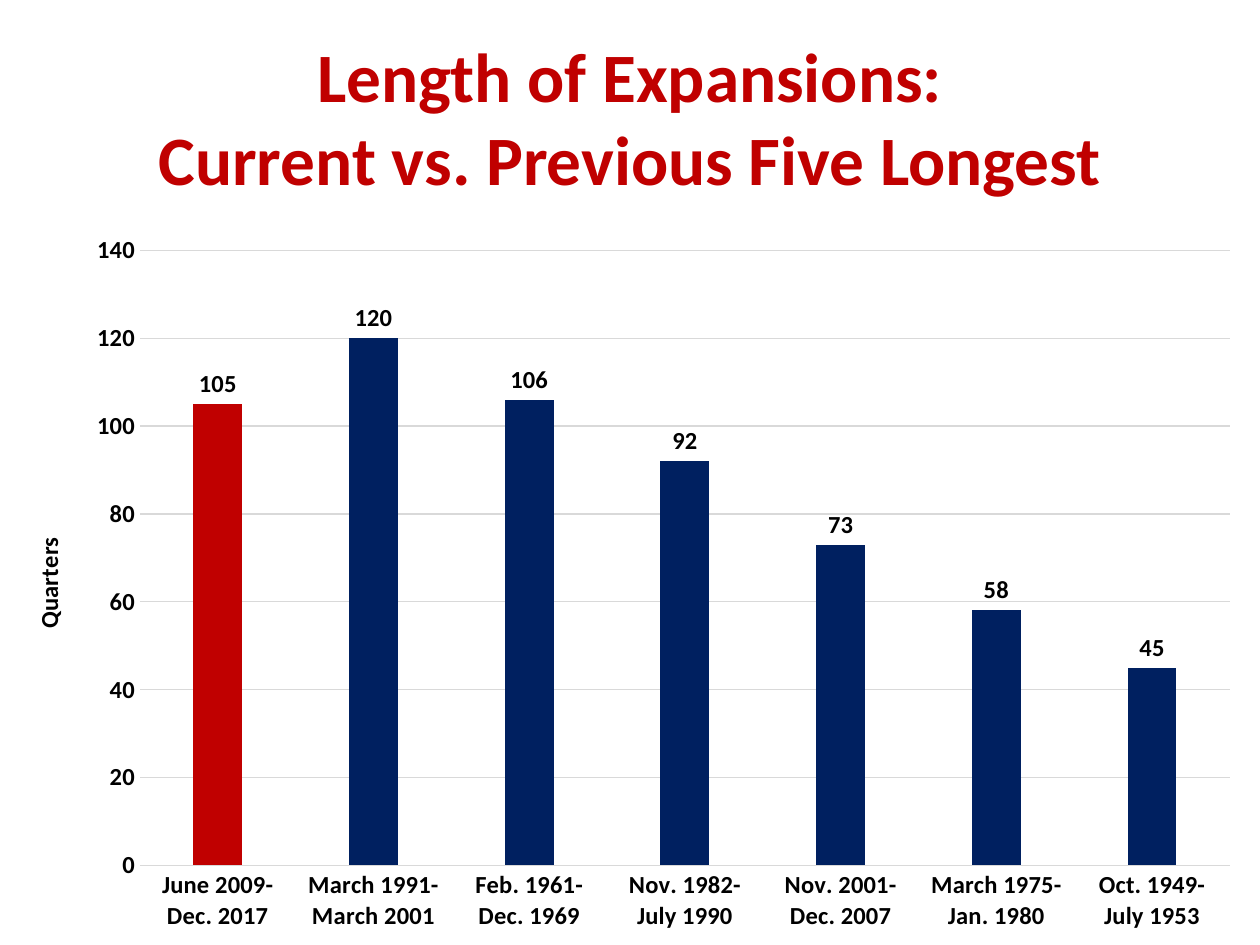
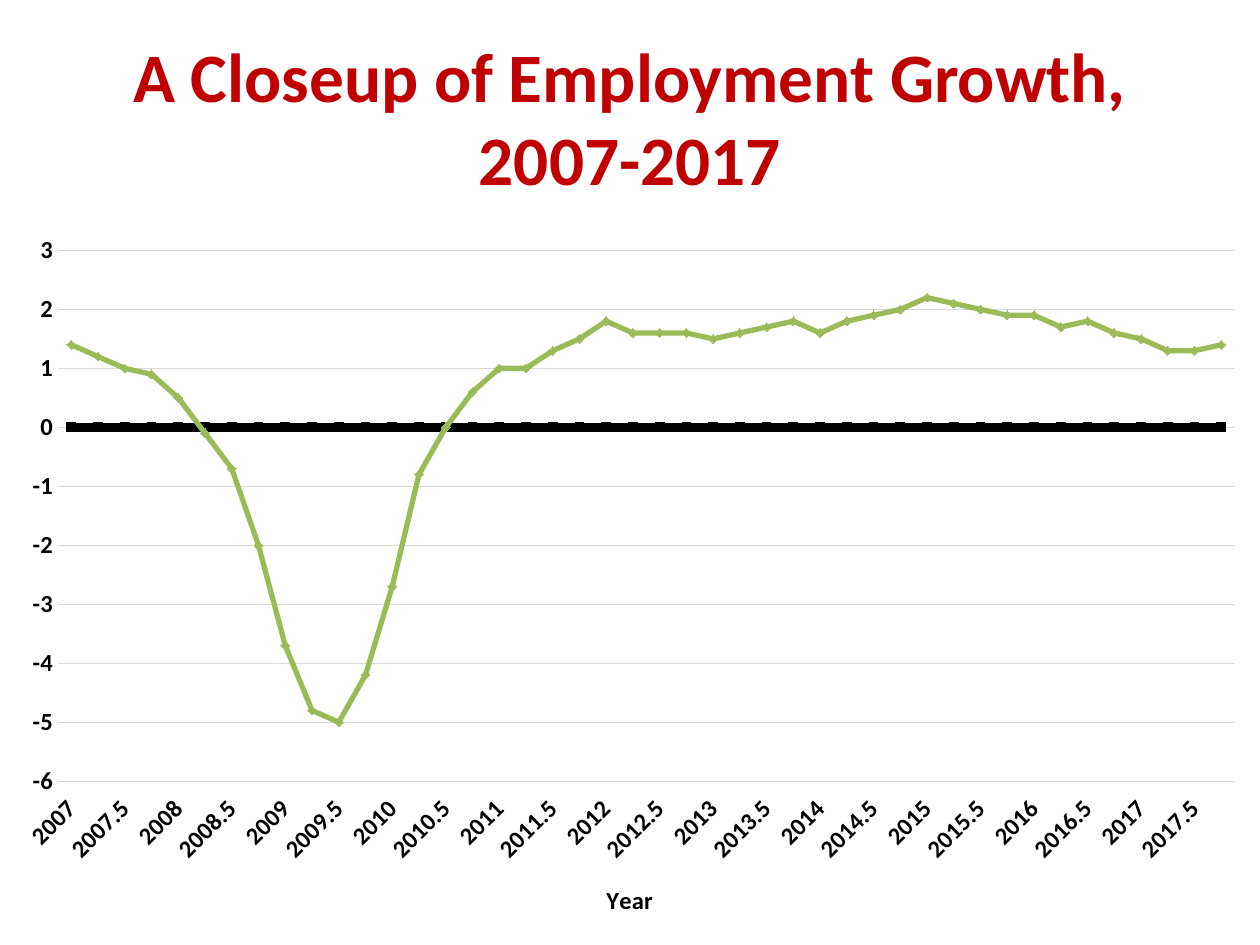
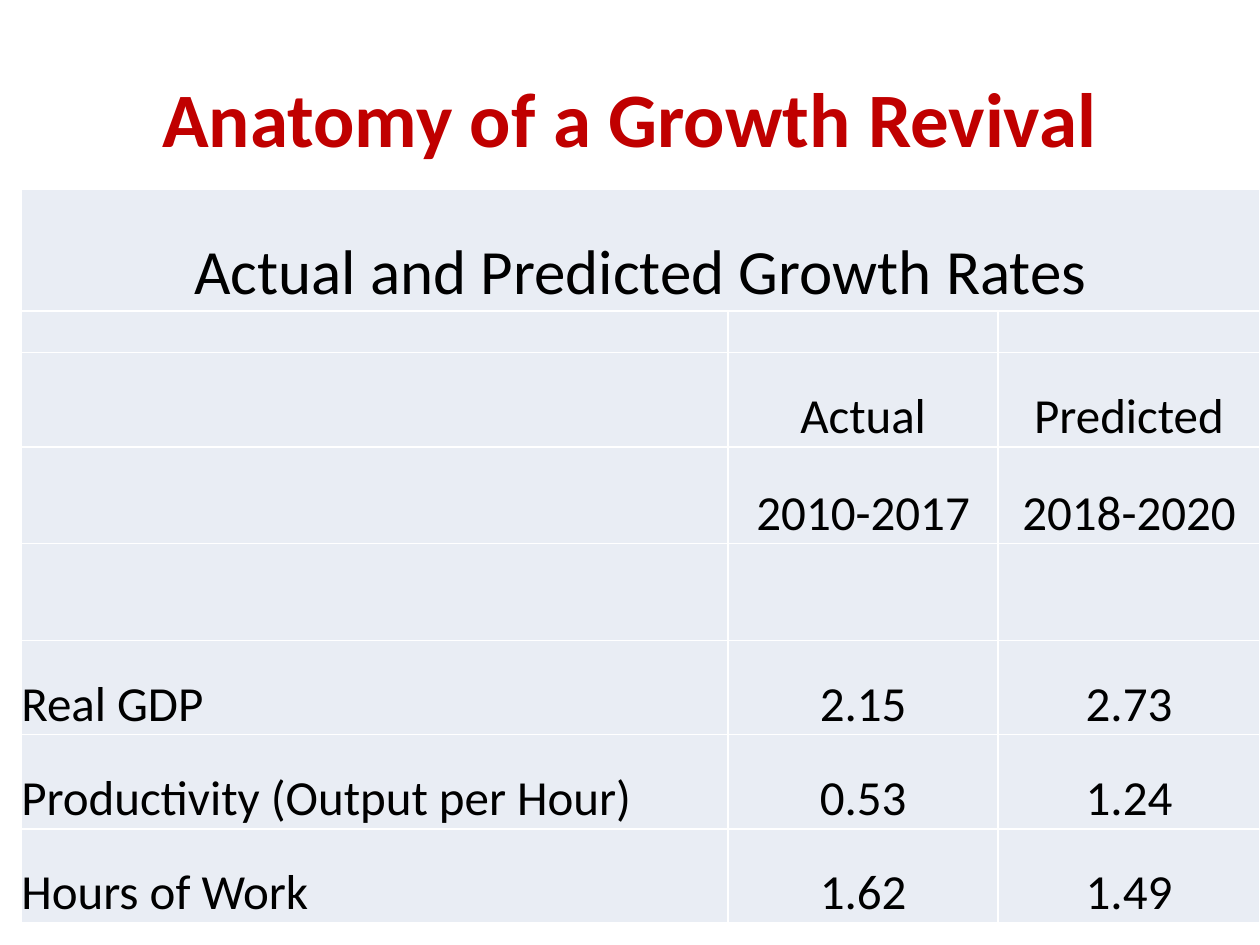
from lxml.etree import SubElement
from pptx import Presentation
from pptx.chart.data import CategoryChartData
from pptx.dml.color import RGBColor
from pptx.enum.chart import XL_CHART_TYPE, XL_LABEL_POSITION, XL_TICK_LABEL_POSITION, XL_TICK_MARK
from pptx.enum.text import MSO_ANCHOR, MSO_AUTO_SIZE, PP_ALIGN
from pptx.oxml import parse_xml
from pptx.oxml.ns import nsdecls, qn
from pptx.util import Cm, Pt

HUES = {"red": "C00000", "navy": "002060", "green": "9BBB59", "black": "000000",
        "grid": "D9D9D9", "pale": "E9EDF4", "white": "FFFFFF"}
FONT = "Calibri"


def hue(name):
    return RGBColor.from_string(HUES[name])


class Deck:
    def __init__(self):
        self.prs = Presentation()
        self.prs.slide_width, self.prs.slide_height = Cm(25.4), Cm(19.05)
        self.slide = None

    def style(self, font, size, color="black", bold=False):
        font.name, font.size, font.bold = FONT, Pt(size), bold
        font.color.rgb = hue(color)

    def start(self, text, size=39.6):
        """Add a slide with its title."""
        self.slide = self.prs.slides.add_slide(self.prs.slide_layouts[5])
        title = self.slide.shapes.title
        title.left, title.top, title.width, title.height = Cm(1.27), Cm(0.76), Cm(22.86), Cm(3.18)
        frame = title.text_frame
        frame.text = text
        frame.auto_size = MSO_AUTO_SIZE.NONE
        frame.vertical_anchor = MSO_ANCHOR.MIDDLE
        frame.paragraphs[0].alignment = PP_ALIGN.CENTER
        for run in frame.paragraphs[0].runs:
            self.style(run.font, size, "red", True)

    def chart(self, kind, left, width, cats, rows, plot, scale):
        """Add a chart; plot is the inner area as shares of the frame."""
        data = CategoryChartData()
        data.categories = cats
        for num, row in enumerate(rows, 1):
            data.add_series(f"Series {num}", row)
        chart = self.slide.shapes.add_chart(
            kind, Cm(left), Cm(4.45), Cm(width), Cm(14.6), data).chart
        self.style(chart.font, 10)
        chart.has_legend = chart.has_title = False
        self.place(chart, plot)
        for axis in (chart.category_axis, chart.value_axis):
            axis.major_tick_mark = axis.minor_tick_mark = XL_TICK_MARK.NONE
            self.style(axis.tick_labels.font, 14, bold=True)
        line = chart.category_axis.format.line
        line.color.rgb, line.width = hue("grid"), Pt(0.75)
        axis = chart.value_axis
        axis.format.line.fill.background()
        axis.minimum_scale, axis.maximum_scale, axis.major_unit = scale
        axis.has_major_gridlines = True
        grid = axis.major_gridlines.format.line
        grid.color.rgb, grid.width = hue("grid"), Pt(0.75)
        return chart

    def place(self, chart, plot):
        area = chart.element.xpath("c:chart/c:plotArea")[0]
        for old in area.findall(qn("c:layout")):
            area.remove(old)
        sizes = "".join(f'<c:{key} val="{val}"/>' for key, val in zip("xywh", plot))
        area.insert(0, parse_xml(
            f'<c:layout {nsdecls("c")}><c:manualLayout><c:layoutTarget val="inner"/>'
            f'<c:xMode val="edge"/><c:yMode val="edge"/>{sizes}</c:manualLayout></c:layout>'))

    def name_axis(self, axis, text):
        frame = axis.axis_title.text_frame
        frame.text = text
        self.style(frame.paragraphs[0].runs[0].font, 14, bold=True)

    def slant(self, axis, skip):
        """Tilt the tick labels and show one in every skip."""
        axis.tick_label_position = XL_TICK_LABEL_POSITION.LOW
        root = axis.tick_labels.font and axis._element
        root.xpath("c:txPr/a:bodyPr")[0].set("rot", "-2700000")
        root.find(qn("c:noMultiLvlLbl")).addprevious(
            parse_xml(f'<c:tickLblSkip {nsdecls("c")} val="{skip}"/>'))

    def trace(self, series, color, width):
        series.smooth = False
        series.marker.style = None
        line = series.format.line
        line.color.rgb, line.width = hue(color), Pt(width)
        series._element.xpath("c:spPr/a:ln")[0].set("cap", "rnd")

    def table(self, left, top, cols, heights, rows):
        table = self.slide.shapes.add_table(
            len(rows), len(cols), Cm(left), Cm(top), Cm(sum(cols)), Cm(sum(heights))).table
        table.first_row = table.horz_banding = False
        for col, width in zip(table.columns, cols):
            col.width = Cm(width)
        for row, height in zip(table.rows, heights):
            row.height = Cm(height)
        for r, row in enumerate(rows):
            for c, text in enumerate(row):
                self.cell(table.cell(r, c), text, 28 if r else 36, r and not c)
        table.cell(0, 0).merge(table.cell(0, len(cols) - 1))

    def cell(self, cell, text, size, flush):
        cell.margin_left = cell.margin_right = cell.margin_top = cell.margin_bottom = 0
        cell.vertical_anchor = MSO_ANCHOR.BOTTOM
        props = cell._tc.get_or_add_tcPr()
        for side in "LRTB":
            edge = SubElement(props, qn(f"a:ln{side}"), w=str(Pt(1)))
            fill = SubElement(edge, qn("a:solidFill"))
            SubElement(fill, qn("a:srgbClr"), val=HUES["white"])
        cell.fill.solid()
        cell.fill.fore_color.rgb = hue("pale")
        if text:
            cell.text = text
            para = cell.text_frame.paragraphs[0]
            para.alignment = PP_ALIGN.LEFT if flush else PP_ALIGN.CENTER
            self.style(para.runs[0].font, size)


def lengths(deck):
    deck.start("Length of Expansions:\vCurrent vs. Previous Five Longest")
    spans = ["June 2009- Dec. 2017", "March 1991- March 2001", "Feb. 1961- Dec. 1969",
             "Nov. 1982- July 1990", "Nov. 2001- Dec. 2007", "March 1975- Jan. 1980",
             "Oct. 1949- July 1953"]
    chart = deck.chart(XL_CHART_TYPE.COLUMN_CLUSTERED, 0.1, 25.2, spans,
                       [[105, 120, 106, 92, 73, 58, 45]],
                       (0.108, 0.041, 0.872, 0.849), (0, 140, 20))
    deck.name_axis(chart.value_axis, "Quarters")
    bars = chart.plots[0]
    bars.gap_width, bars.overlap, bars.vary_by_categories = 219, -27, False
    series = bars.series[0]
    for num in range(len(spans)):
        fill = series.points[num].format.fill
        fill.solid()
        fill.fore_color.rgb = hue("navy" if num else "red")
    labels = series.data_labels
    labels.show_value = True
    labels.position = XL_LABEL_POSITION.OUTSIDE_END
    deck.style(labels.font, 14, bold=True)


def jobs(deck):
    deck.start("A Closeup of Employment Growth, 2007-2017")
    growth = [1.4, 1.2, 1, 0.9, 0.5, -0.1, -0.7, -2, -3.7, -4.8, -5, -4.2, -2.7, -0.8, 0,
              0.6, 1, 1, 1.3, 1.5, 1.8, 1.6, 1.6, 1.6, 1.5, 1.6, 1.7, 1.8, 1.6, 1.8, 1.9,
              2, 2.2, 2.1, 2, 1.9, 1.9, 1.7, 1.8, 1.6, 1.5, 1.3, 1.3, 1.4]
    dates = [f"{2007 + num / 4:g}" for num in range(len(growth))]
    chart = deck.chart(XL_CHART_TYPE.LINE, 0, 25.4, dates, [[0] * len(growth), growth],
                       (0.046, 0.041, 0.934, 0.733), (-6, 3, 1))
    deck.name_axis(chart.category_axis, "Year")
    deck.slant(chart.category_axis, 2)
    chart.plots[0].vary_by_categories = False
    zero, curve = chart.plots[0].series
    deck.trace(zero, "black", 5)
    deck.trace(curve, "green", 3)


def rates(deck):
    deck.start("Anatomy of a Growth Revival", 44)
    deck.table(0.43, 3.81, (14.25, 5.44, 5.28),
               (2.46, 0.84, 1.9, 1.95, 1.95, 1.9, 1.9, 1.9), [
        ("Actual and Predicted Growth Rates", "", ""),
        ("", "", ""),
        ("", "Actual", "Predicted"),
        ("", "2010-2017", "2018-2020"),
        ("", "", ""),
        ("Real GDP", "2.15", "2.73"),
        ("Productivity (Output per Hour)", "0.53", "1.24"),
        ("Hours of Work", "1.62", "1.49")])


def main():
    deck = Deck()
    lengths(deck)
    jobs(deck)
    rates(deck)
    deck.prs.save("out.pptx")


if __name__ == "__main__":
    main()
